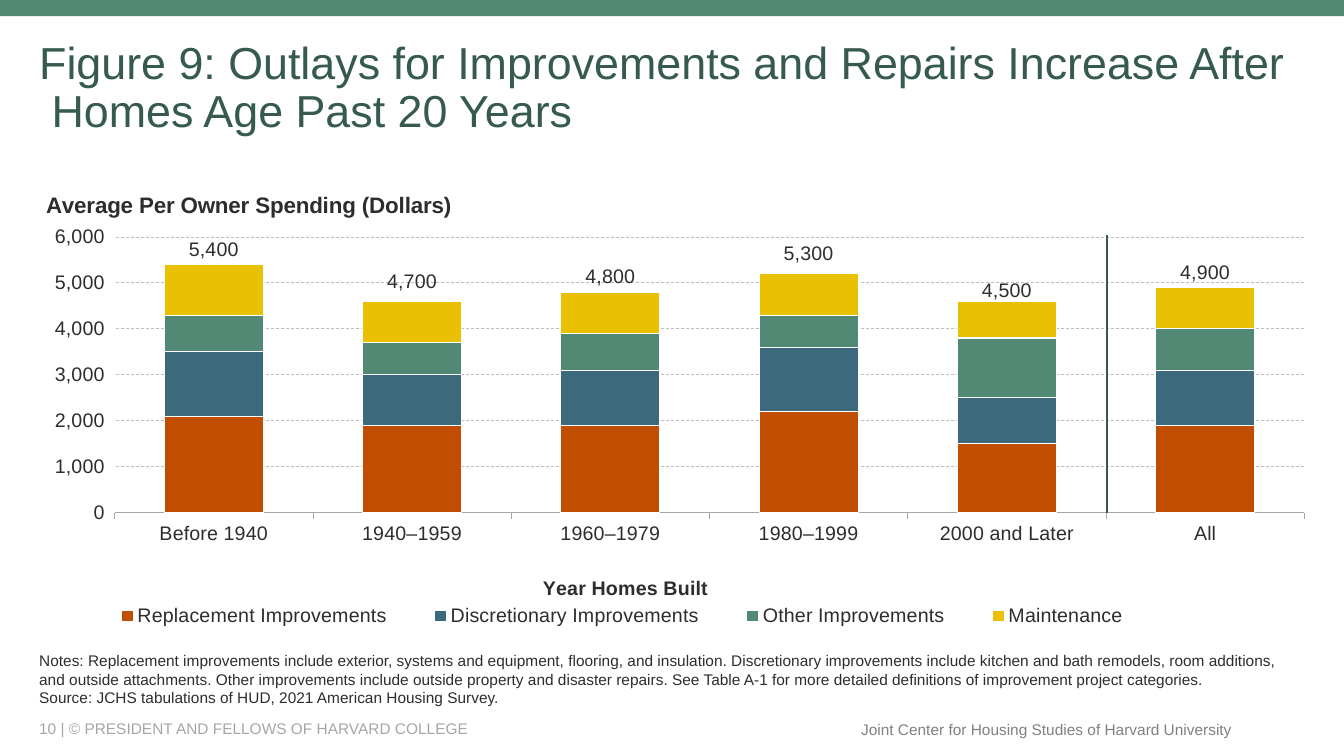
from lxml import etree
from pptx import Presentation
from pptx.chart.data import CategoryChartData
from pptx.dml.color import RGBColor
from pptx.enum import chart as ec, dml, shapes, text
from pptx.oxml import parse_xml
from pptx.oxml.ns import nsdecls, qn
from pptx.util import Inches, Pt

HEX = {"green": "528975", "dark": "365B4E", "ink": "2D2D2D", "pale": "A6A6A6",
       "gray": "808080", "grid": "BDBDBD", "white": "FFFFFF",
       "rust": "C14D00", "blue": "3C6A7C", "gold": "E9C002"}
RGB = {name: RGBColor.from_string(code) for name, code in HEX.items()}
MID, BOTTOM = text.MSO_ANCHOR.MIDDLE, text.MSO_ANCHOR.BOTTOM
LEFT, RIGHT = text.PP_ALIGN.LEFT, text.PP_ALIGN.RIGHT


def style(font, size, color, bold=False):
    font.name, font.size, font.bold = "Arial", Pt(size), bold
    font.color.rgb = RGB[color]


def place(host, index, inner="", **at):
    """Give a chart part a manual layout, as fractions of the chart."""
    for old in host.findall(qn("c:layout")):
        host.remove(old)
    modes = "".join(f'<c:{k}Mode val="edge"/>' for k in "xy")
    spots = "".join(f'<c:{k} val="{v}"/>' for k, v in at.items())
    host.insert(index, parse_xml(
        f'<c:layout {nsdecls("c")}><c:manualLayout>{inner}{modes}{spots}'
        '</c:manualLayout></c:layout>'))


prs = Presentation()
prs.slide_width, prs.slide_height = Inches(13.33), Inches(7.5)
slide = prs.slides.add_slide(prs.slide_layouts[6])

# Top band
band = slide.shapes.add_shape(shapes.MSO_SHAPE.RECTANGLE, 0, 0,
                              prs.slide_width, Inches(0.16))
band.shadow.inherit = False
band.fill.solid()
band.fill.fore_color.rgb = RGB["green"]
band.line.fill.background()

# Title, notes and footer
notes = [
    "Notes: Replacement improvements include exterior, systems and equipment, "
    "flooring, and insulation. Discretionary improvements include kitchen and bath "
    "remodels, room additions, and outside attachments. Other improvements include "
    "outside property and disaster repairs. See Table A-1 for more detailed "
    "definitions of improvement project categories.",
    "Source: JCHS tabulations of HUD, 2021 American Housing Survey."]
boxes = [
    ((0.29, 0.4, 12.65, 0.97),
     ["Figure 9: Outlays for Improvements and Repairs Increase After\v"
      " Homes Age Past 20 Years"], 32, "dark", MID, LEFT, 0.9),
    ((0.29, 6.48, 12.65, 0.58), notes, 11, "ink", BOTTOM, LEFT, 1),
    ((0.29, 7.13, 7.92, 0.2), ["10 | © PRESIDENT AND FELLOWS OF HARVARD COLLEGE"],
     11, "pale", MID, LEFT, 1),
    ((8.42, 7.09, 3.9, 0.29),
     ["Joint Center for Housing Studies of Harvard University"],
     11, "gray", MID, RIGHT, 1)]
for at, lines, size, color, anchor, align, space in boxes:
    frame = slide.shapes.add_textbox(*map(Inches, at)).text_frame
    frame.word_wrap = True
    frame.vertical_anchor = anchor
    for i, line in enumerate(lines):
        para = frame.add_paragraph() if i else frame.paragraphs[0]
        para.text = line
        para.alignment, para.line_spacing = align, space
        style(para.font, size, color)

# Chart data
series = [
    ("Replacement Improvements", "rust", (2100, 1900, 1900, 2200, 1500, 1900)),
    ("Discretionary Improvements", "blue", (1400, 1100, 1200, 1400, 1000, 1200)),
    ("Other Improvements", "green", (800, 700, 800, 700, 1300, 900)),
    ("Maintenance", "gold", (1100, 900, 900, 900, 800, 900)),
    ("Series 5", None, (5400, 4700, 4800, 5300, 4500, 4900))]
data = CategoryChartData(number_format="#,##0")
data.categories = ["Before 1940", "1940–1959", "1960–1979", "1980–1999",
                   "2000 and Later", "All"]
for name, color, vals in series:
    data.add_series(name, vals)
chart = slide.shapes.add_chart(
    ec.XL_CHART_TYPE.COLUMN_STACKED, *map(Inches, (0.29, 1.72, 12.65, 4.6)),
    data).chart
style(chart.font, 14, "ink")

# Axes
cat, val = chart.category_axis, chart.value_axis
for axis in (cat, val):
    style(axis.tick_labels.font, 14, "ink")
    axis.major_tick_mark = ec.XL_TICK_MARK.OUTSIDE
cat.format.line.color.rgb = RGB["pale"]
cat.format.line.width = Pt(0.5)
val.format.line.fill.background()
val.minimum_scale, val.maximum_scale, val.major_unit = 0, 6000, 1000
val.tick_labels.number_format = "#,##0"
val.tick_labels.number_format_is_linked = False
grid = val.major_gridlines.format.line
grid.color.rgb, grid.width = RGB["grid"], Pt(0.5)
grid.dash_style = dml.MSO_LINE.DASH

# Chart title and axis title
chart.has_title = cat.has_title = True
for title, words, size, x, y in (
        (chart.chart_title, "Average Per Owner Spending (Dollars)", 16, 0.01, 0.03),
        (cat.axis_title, "Year Homes Built", 14, 0.4, 0.86)):
    para = title.text_frame.paragraphs[0]
    para.text = words
    style(para.font, size, "ink", True)
    place(title._element, 1, x=x, y=y)

# Legend without the totals
chart.has_legend = True
legend = chart.legend
legend.position = ec.XL_LEGEND_POSITION.BOTTOM
legend.include_in_layout = False
style(legend.font, 14, "ink")
legend._element.insert(1, parse_xml(
    f'<c:legendEntry {nsdecls("c")}><c:idx val="4"/><c:delete val="1"/>'
    '</c:legendEntry>'))
place(legend._element, 2, x=0.04, y=0.92, w=0.85, h=0.07)

# Totals move to a clustered plot on a hidden second axis
bars = chart.plots[0]
bars.gap_width, bars.overlap, bars.vary_by_categories = 100, 100, False
area = bars._element.getparent()
place(area, 0, '<c:layoutTarget val="inner"/>', x=0.067, y=0.137, w=0.933, h=0.595)
total = parse_xml(
    f'<c:barChart {nsdecls("c")}><c:barDir val="col"/><c:grouping val="clustered"/>'
    '<c:varyColors val="0"/><c:gapWidth val="100"/>'
    '<c:axId val="501"/><c:axId val="502"/></c:barChart>')
total.insert(3, bars.series[4]._element)
bars._element.addnext(total)
for kind, own, cross, side, span, end in (
        ("valAx", 502, 501, "r", '<c:max val="6000"/><c:min val="0"/>', "max"),
        ("catAx", 501, 502, "b", "", "autoZero")):
    val._element.addnext(parse_xml(
        f'<c:{kind} {nsdecls("c")}><c:axId val="{own}"/><c:scaling>'
        f'<c:orientation val="minMax"/>{span}</c:scaling><c:delete val="1"/>'
        f'<c:axPos val="{side}"/><c:crossAx val="{cross}"/>'
        f'<c:crosses val="{end}"/></c:{kind}>'))

# Series colours and total labels
for ser, (name, color, vals) in zip(chart.plots[0].series, series):
    ser.format.fill.solid()
    ser.format.fill.fore_color.rgb = RGB[color]
    ser.format.line.color.rgb = RGB["white"]
    ser.format.line.width = Pt(0.75)
sums = chart.plots[1].series[0]
sums.format.fill.background()
sums.format.line.fill.background()
labels = sums.data_labels
labels.show_value = True
labels.position = ec.XL_LABEL_POSITION.OUTSIDE_END
labels.number_format, labels.number_format_is_linked = "#,##0", False
style(labels.font, 14, "ink")

# Divider before "All"
rule = slide.shapes.add_connector(shapes.MSO_CONNECTOR.STRAIGHT,
                                  *map(Inches, (10.98, 5.09, 10.98, 2.33)))
rule.line.color.rgb, rule.line.width = RGB["dark"], Pt(1)
etree.SubElement(rule._element.spPr, qn("a:effectLst"))

prs.save("out.pptx")
